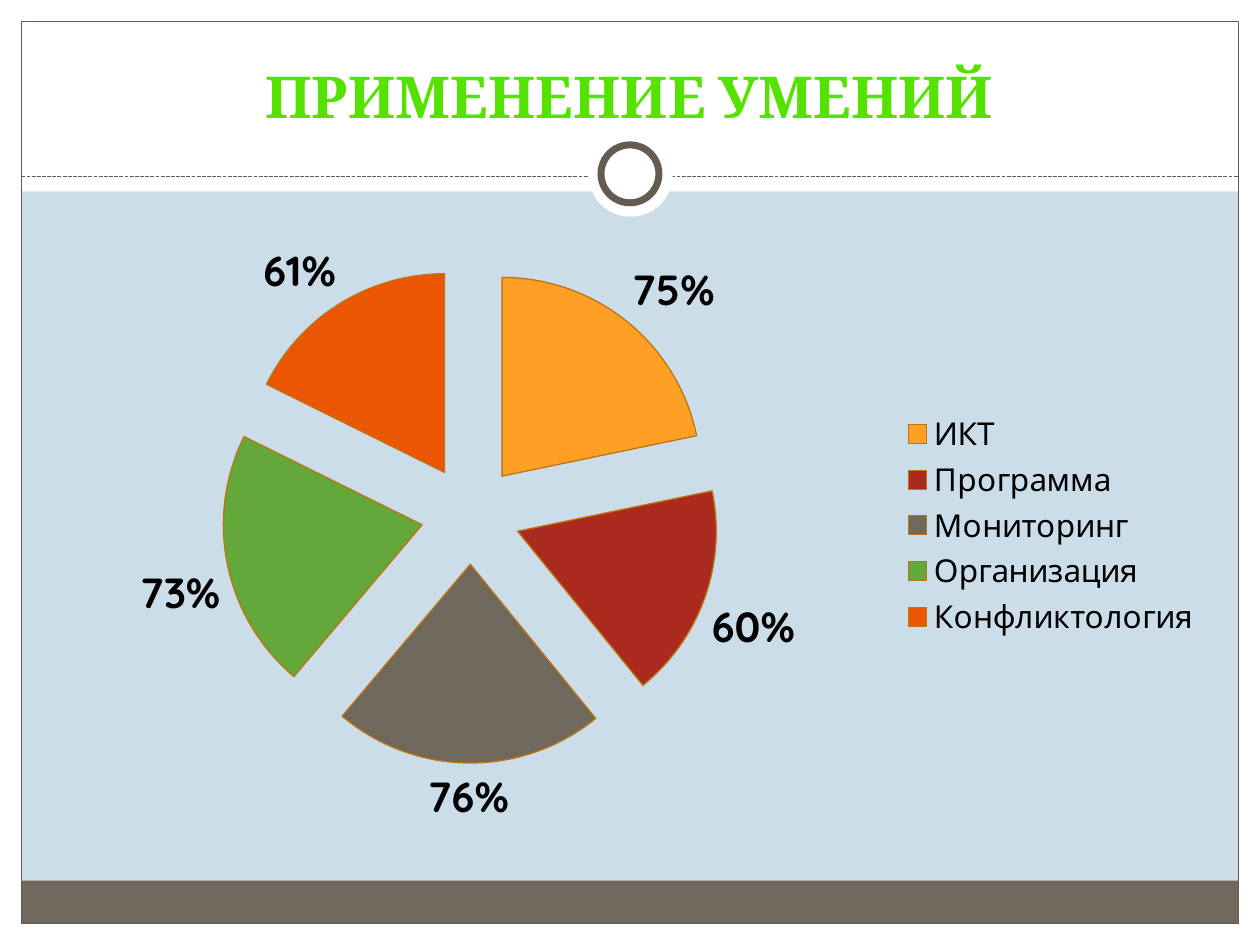
from dataclasses import dataclass
from typing import Optional

from lxml import etree
from pptx import Presentation
from pptx.chart.data import CategoryChartData
from pptx.dml.color import RGBColor
from pptx.enum.chart import XL_CHART_TYPE, XL_LABEL_POSITION, XL_LEGEND_POSITION
from pptx.enum.dml import MSO_LINE
from pptx.enum.shapes import MSO_CONNECTOR, MSO_SHAPE
from pptx.enum.text import MSO_ANCHOR, MSO_AUTO_SIZE, PP_ALIGN
from pptx.oxml.ns import qn
from pptx.slide import Slide
from pptx.util import Inches, Pt

PIE = XL_CHART_TYPE.PIE
OUTSIDE_END = XL_LABEL_POSITION.OUTSIDE_END
LEGEND_RIGHT = XL_LEGEND_POSITION.RIGHT
DASHED = MSO_LINE.SQUARE_DOT
STRAIGHT = MSO_CONNECTOR.STRAIGHT
RECTANGLE = MSO_SHAPE.RECTANGLE
OVAL = MSO_SHAPE.OVAL
BOTTOM = MSO_ANCHOR.BOTTOM
NO_AUTOFIT = MSO_AUTO_SIZE.NONE
CENTER = PP_ALIGN.CENTER
TITLE_ONLY = 5


@dataclass(frozen=True)
class Theme:
    background: str = "CCDDEA"
    white: str = "FFFFFF"
    band: str = "71685C"
    frame: str = "645C51"
    title: str = "56E200"
    text: str = "000000"
    slice_line: str = "BE7410"
    title_font: str = "Cambria"
    chart_font: str = "Quicksand"
    title_size: float = 33
    legend_size: float = 18
    label_size: float = 24
    thin_line: float = 0.75
    ring_line: float = 4


@dataclass(frozen=True)
class Box:
    left: float
    top: float
    width: float
    height: float

    def lengths(self) -> tuple:
        return tuple(Inches(n) for n in (self.left, self.top, self.width, self.height))


@dataclass(frozen=True)
class Decoration:
    box: Box
    fill: Optional[str] = None
    line: Optional[str] = None
    line_width: float = 0
    kind: MSO_SHAPE = RECTANGLE


@dataclass(frozen=True)
class Skill:
    name: str
    share: float
    color: str


THEME = Theme()
MARGIN = 0.17
WIDTH, HEIGHT = 10, 7.5
RIGHT, FLOOR = WIDTH - MARGIN, HEIGHT - MARGIN
DIVIDER_TOP = 1.4

PANELS = [
    Decoration(Box(0, FLOOR, WIDTH, MARGIN), THEME.white),
    Decoration(Box(0, 0, WIDTH, 1.52), THEME.white),
    Decoration(Box(0, 0, MARGIN, HEIGHT), THEME.white),
    Decoration(Box(RIGHT, 0, MARGIN, HEIGHT), THEME.white),
    Decoration(Box(MARGIN, 6.99, RIGHT - MARGIN, 0.34), THEME.band),
    Decoration(Box(MARGIN, MARGIN, RIGHT - MARGIN, FLOOR - MARGIN),
               line=THEME.frame, line_width=THEME.thin_line),
]
RINGS = [
    Decoration(Box(4.67, 1.05, 0.67, 0.67), THEME.white, kind=OVAL),
    Decoration(Box(4.77, 1.15, 0.46, 0.46), THEME.white, THEME.frame, THEME.ring_line, OVAL),
]
SKILLS = [
    Skill("ИКТ", 0.75, "FDA023"),
    Skill("Программа", 0.6, "AA2B1E"),
    Skill("Мониторинг", 0.76, "71685C"),
    Skill("Организация", 0.73, "64A73B"),
    Skill("Конфликтология", 0.61, "EB5605"),
]


def rgb(color: str) -> RGBColor:
    return RGBColor.from_string(color)


def draw_decoration(slide: Slide, item: Decoration) -> None:
    shape = slide.shapes.add_shape(item.kind, *item.box.lengths())
    shape.shadow.inherit = False
    if item.fill:
        shape.fill.solid()
        shape.fill.fore_color.rgb = rgb(item.fill)
    else:
        shape.fill.background()
    if item.line:
        shape.line.color.rgb = rgb(item.line)
        shape.line.width = Pt(item.line_width)
    else:
        shape.line.fill.background()


def draw_divider(slide: Slide) -> None:
    divider = slide.shapes.add_connector(
        STRAIGHT, Inches(MARGIN), Inches(DIVIDER_TOP), Inches(RIGHT), Inches(DIVIDER_TOP))
    divider.line.color.rgb = rgb(THEME.frame)
    divider.line.width = Pt(THEME.thin_line)
    divider.line.dash_style = DASHED
    etree.SubElement(divider._element.spPr, qn("a:effectLst"))


def write_title(slide: Slide, text: str, box: Box) -> None:
    title = slide.shapes.title
    title.left, title.top, title.width, title.height = box.lengths()
    frame = title.text_frame
    frame.text = text
    frame.auto_size = NO_AUTOFIT
    frame.vertical_anchor = BOTTOM
    paragraph = frame.paragraphs[0]
    paragraph.alignment = CENTER
    font = paragraph.runs[0].font
    font.name = THEME.title_font
    font.size = Pt(THEME.title_size)
    font.bold = True
    font.color.rgb = rgb(THEME.title)
    slide.shapes._spTree.append(title._element)


def draw_pie(slide: Slide, skills: list[Skill], box: Box, explosion: int) -> None:
    data = CategoryChartData(number_format="0%")
    data.categories = [skill.name for skill in skills]
    data.add_series("Series 1", [skill.share for skill in skills])
    chart = slide.shapes.add_chart(PIE, *box.lengths(), data).chart
    chart.has_title = False
    chart.font.name = THEME.chart_font
    chart.font.size = Pt(THEME.legend_size)
    chart.font.color.rgb = rgb(THEME.text)
    chart.has_legend = True
    chart.legend.position = LEGEND_RIGHT
    chart.legend.include_in_layout = False

    plot = chart.plots[0]
    plot.vary_by_categories = True
    series = plot.series[0]
    series.format.line.color.rgb = rgb(THEME.slice_line)
    exploded = etree.Element(qn("c:explosion"), val=str(explosion))
    series._element.find(qn("c:spPr")).addnext(exploded)
    for index, skill in enumerate(skills):
        point = series.points[index].format
        point.fill.solid()
        point.fill.fore_color.rgb = rgb(skill.color)
        point.line.color.rgb = rgb(THEME.slice_line)
        point.line.width = Pt(THEME.thin_line)

    labels = series.data_labels
    labels.show_value = True
    labels.show_percentage = False
    labels.number_format = "0%"
    labels.number_format_is_linked = False
    labels.position = OUTSIDE_END
    labels.font.name = THEME.chart_font
    labels.font.size = Pt(THEME.label_size)
    labels.font.bold = True
    labels.font.color.rgb = rgb(THEME.text)


def main() -> None:
    presentation = Presentation()
    presentation.slide_width = Inches(WIDTH)
    presentation.slide_height = Inches(HEIGHT)
    slide = presentation.slides.add_slide(presentation.slide_layouts[TITLE_ONLY])
    slide.background.fill.solid()
    slide.background.fill.fore_color.rgb = rgb(THEME.background)
    for panel in PANELS:
        draw_decoration(slide, panel)
    draw_divider(slide)
    for ring in RINGS:
        draw_decoration(slide, ring)
    write_title(slide, "ПРИМЕНЕНИЕ УМЕНИЙ", Box(0.33, 0.25, 9.33, 0.83))
    draw_pie(slide, SKILLS, Box(0.33, 1.67, 9.3, 5), explosion=25)
    presentation.save("out.pptx")


if __name__ == "__main__":
    main()
